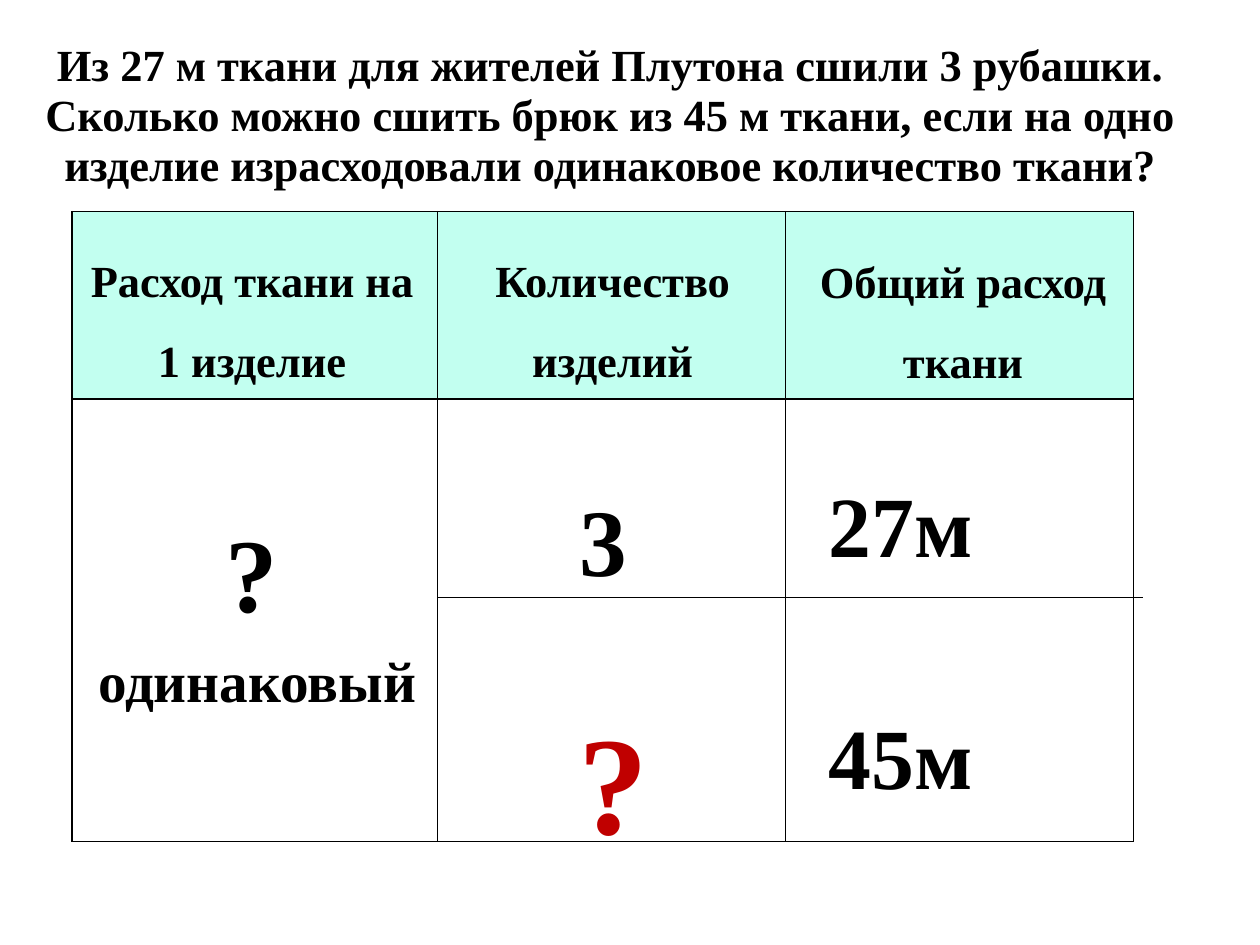
from lxml import etree
from pptx import Presentation
from pptx.dml.color import RGBColor
from pptx.enum.shapes import MSO_CONNECTOR
from pptx.enum.text import MSO_ANCHOR, MSO_AUTO_SIZE, PP_ALIGN
from pptx.oxml import parse_xml
from pptx.oxml.ns import nsdecls, qn
from pptx.util import Inches, Pt

BLACK = RGBColor(0x00, 0x00, 0x00)
WHITE = RGBColor(0xFF, 0xFF, 0xFF)
RED = RGBColor(0xC0, 0x00, 0x00)
MINT = RGBColor(0xC2, 0xFF, 0xF0)
FONT = "Times New Roman"

COLUMN_WIDTHS = (3.2, 3.04, 3.05)
ROW_HEIGHTS = (1.64, 1.74, 2.13)

LOOSE = {"line_spacing": 1.5, "space_after": Pt(6)}
CENTERED = {**LOOSE, "alignment": PP_ALIGN.CENTER}
TIGHT = {"line_spacing": 0.93}

# Text, offset from the table corner, size, points, colour, wrap, paragraph format
LABELS = (
    ("Расход ткани на 1 изделие", (-0.07, 0.08, 3.29, 1.43), 28, BLACK, True, CENTERED),
    ("Количество изделий", (3.23, 0.08, 3, 1.43), 28, BLACK, True, CENTERED),
    ("Общий расход ткани", (6.22, 0.09, 3.15, 1.51), 28, BLACK, True, CENTERED),
    ("3", (4.34, 1.81, 0.62, 1.43), 60, BLACK, False, CENTERED),
    ("27м", (6.52, 2.31, 1.66, 0.95), 54, BLACK, False, TIGHT),
    ("?", (4.33, 3.45, 0.82, 2.06), 88, RED, False, CENTERED),
    ("45м", (6.52, 4.34, 1.47, 0.95), 54, BLACK, False, TIGHT),
    ("?", (1.24, 1.99, 0.66, 1.57), 66, BLACK, False, CENTERED),
    ("одинаковый", (0.13, 3.45, 3.01, 0.9), 36, BLACK, False, LOOSE),
)


def write(frame, text, points, color, formats):
    para = frame.paragraphs[0]
    for name, value in formats.items():
        setattr(para, name, value)
    span = para.add_run()
    span.text = text
    for name, value in {"name": FONT, "size": Pt(points), "bold": True}.items():
        setattr(span.font, name, value)
    span.font.color.rgb = color


def add_problem(page, left, top, width, height):
    title = page.shapes.title
    bounds = {"left": left, "top": top, "width": width, "height": height}
    for name, value in bounds.items():
        setattr(title, name, Inches(value))
    frame = title.text_frame
    settings = {
        "word_wrap": True,
        "auto_size": MSO_AUTO_SIZE.NONE,
        "vertical_anchor": MSO_ANCHOR.MIDDLE,
        "margin_left": 0,
        "margin_right": 0,
        "margin_top": 0,
        "margin_bottom": 0,
    }
    for name, value in settings.items():
        setattr(frame, name, value)
    write(
        frame,
        "Из 27 м ткани для жителей Плутона сшили 3 рубашки. "
        "Сколько можно сшить брюк из 45 м ткани, если на одно изделие "
        "израсходовали одинаковое количество ткани?",
        28, BLACK, {**TIGHT, "alignment": PP_ALIGN.CENTER},
    )


def style_cell(cell, color):
    cell.fill.solid()
    cell.fill.fore_color.rgb = color
    properties = cell._tc.get_or_add_tcPr()
    for index, side in enumerate(("lnL", "lnR", "lnT", "lnB")):
        border = parse_xml(
            f'<a:{side} {nsdecls("a")} w="{Pt(1)}"><a:solidFill>'
            f'<a:srgbClr val="{BLACK}"/></a:solidFill></a:{side}>'
        )
        properties.insert(index, border)


def add_grid(page, left, top, width, height):
    table = page.shapes.add_table(
        len(ROW_HEIGHTS), len(COLUMN_WIDTHS),
        Inches(left), Inches(top), Inches(width), Inches(height),
    ).table
    for column, column_width in zip(table.columns, COLUMN_WIDTHS):
        column.width = Inches(column_width)
    for index, row_height in enumerate(ROW_HEIGHTS):
        table.rows[index].height = Inches(row_height)
        for cell in table.rows[index].cells:
            style_cell(cell, MINT if index == 0 else WHITE)
    # The outer columns join their two lower rows
    for column in (0, 2):
        table.cell(1, column).merge(table.cell(2, column))


def add_label(page, left, top, label):
    text, (across, down, width, height), points, color, wrap, formats = label
    box = page.shapes.add_textbox(
        Inches(left + across), Inches(top + down), Inches(width), Inches(height)
    )
    box.text_frame.word_wrap = wrap
    box.text_frame.auto_size = MSO_AUTO_SIZE.SHAPE_TO_FIT_TEXT
    write(box.text_frame, text, points, color, formats)


def add_divider(page, left, top, width):
    line = page.shapes.add_connector(
        MSO_CONNECTOR.STRAIGHT,
        Inches(left), Inches(top), Inches(left + width), Inches(top),
    )
    line.line.color.rgb = BLACK
    line.line.width = Pt(0.75)
    etree.SubElement(line._element.spPr, qn("a:effectLst"))


def add_solution_table(page, left, top):
    add_grid(page, left, top, sum(COLUMN_WIDTHS), sum(ROW_HEIGHTS))
    for label in LABELS:
        add_label(page, left, top, label)
    # Line between the two fabric totals
    add_divider(page, left + 6.22, top + sum(ROW_HEIGHTS[:2]), 3.15)


def main():
    deck = Presentation()
    # The page measures 28 by 21 centimetres
    deck.slide_width, deck.slide_height = Inches(28 / 2.54), Inches(21 / 2.54)
    page = deck.slides.add_slide(deck.slide_layouts[5])
    page.background.fill.solid()
    page.background.fill.fore_color.rgb = WHITE
    add_problem(page, 0.2, 0.33, 10.27, 1.38)
    add_solution_table(page, 0.63, 1.85)
    deck.save("out.pptx")


if __name__ == "__main__":
    main()
